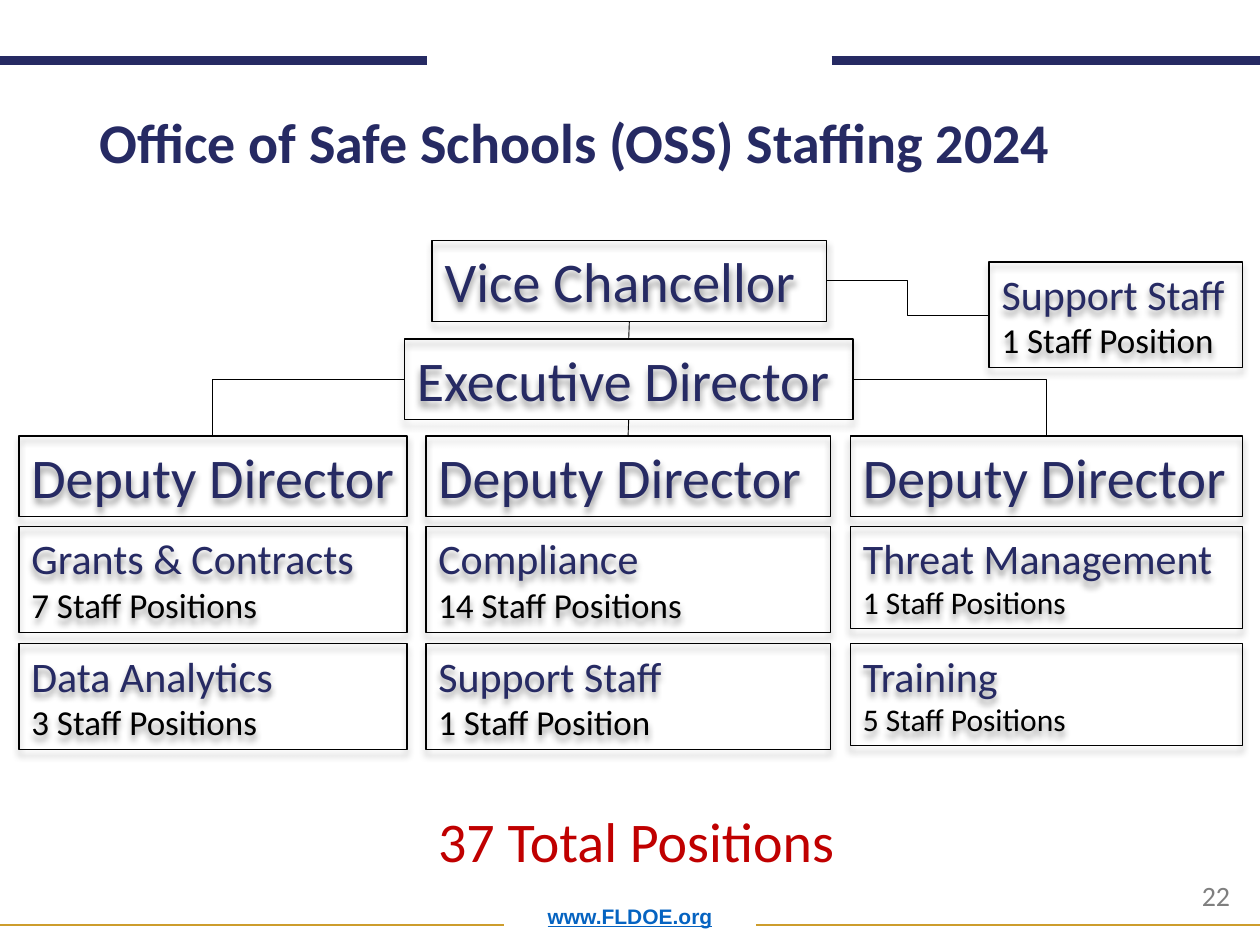
from lxml.etree import SubElement
from pptx import Presentation
from pptx.dml.color import RGBColor
from pptx.enum.shapes import MSO_CONNECTOR, MSO_SHAPE
from pptx.enum.text import MSO_ANCHOR, MSO_AUTO_SIZE, PP_ALIGN
from pptx.oxml.ns import qn
from pptx.util import Inches, Pt

COLORS = {
    "navy": "262A63",
    "gold": "CD9D2C",
    "red": "C00000",
    "black": "000000",
    "gray": "7F7F7F",
    "link": "0563C1",
}
TOP, LEFT, BOTTOM, RIGHT = range(4)
DEPUTIES = [
    (0.15, 3.08, 0.84, 20, [("Grants & Contracts", "7 Staff Positions"),
                            ("Data Analytics", "3 Staff Positions")]),
    (3.38, 3.21, 0.84, 20, [("Compliance", "14 Staff Positions"),
                            ("Support Staff", "1 Staff Position")]),
    (6.75, 3.11, 0.81, 18, [("Threat Management", "1 Staff Positions"),
                            ("Training", "5 Staff Positions")]),
]


def rgb(name):
    return RGBColor.from_string(COLORS[name])


def format_text(p, size, color, font="Calibri", bold=False, align=PP_ALIGN.LEFT):
    p.alignment = align
    for r in p.runs:
        r.font.name = font
        r.font.size = Pt(size)
        r.font.bold = bold
        r.font.color.rgb = rgb(color)


def add_label(s, box, text, size, color, **style):
    tf = s.shapes.add_textbox(*map(Inches, box)).text_frame
    tf.word_wrap = True
    tf.text = text
    format_text(tf.paragraphs[0], size, color, **style)
    return tf


def style_line(c, color, width):
    c.line.color.rgb = rgb(color)
    c.line.width = Pt(width)
    SubElement(c._element.spPr, qn("a:effectLst"))


def add_rule(s, left, right, y, color, width):
    c = s.shapes.add_connector(MSO_CONNECTOR.STRAIGHT, Inches(left), Inches(y),
                               Inches(right), Inches(y))
    style_line(c, color, width)


def add_shadow(sp):
    effects = sp._element.spPr.find(qn("a:effectLst"))
    shadow = SubElement(effects, qn("a:outerShdw"), blurRad=str(Pt(4)),
                        dist=str(Pt(3)), dir="5400000", algn="t", rotWithShape="0")
    color = SubElement(shadow, qn("a:srgbClr"), val=COLORS["black"])
    SubElement(color, qn("a:alpha"), val="40000")


def add_box(s, box, lines):
    sp = s.shapes.add_shape(MSO_SHAPE.RECTANGLE, *map(Inches, box))
    sp.fill.background()
    sp.line.color.rgb = rgb("black")
    sp.line.width = Pt(0.75)
    sp.shadow.inherit = False
    add_shadow(sp)
    tf = sp.text_frame
    tf.word_wrap = True
    tf.vertical_anchor = MSO_ANCHOR.TOP
    tf.text = "\n".join(text for text, _, _ in lines)
    for p, (_, size, color) in zip(tf.paragraphs, lines):
        format_text(p, size, color)
    return sp


def add_role(s, box, role):
    return add_box(s, box, [(role, 32, "navy")])


def add_unit(s, box, name, staff, size):
    return add_box(s, box, [(name, 24, "navy"), (staff, size, "black")])


def join(s, start, start_side, end, end_side, preset="line"):
    kind = MSO_CONNECTOR.STRAIGHT if preset == "line" else MSO_CONNECTOR.ELBOW
    c = s.shapes.add_connector(kind, 0, 0, 0, 0)
    c.begin_connect(start, start_side)
    c.end_connect(end, end_side)
    c._element.spPr.find(qn("a:prstGeom")).set("prst", preset)
    style_line(c, "black", 0.5)


def add_frame(s, width, height):
    top, bottom = 0.48, height - 0.16
    add_rule(s, 0, 3.39, top, "navy", 5)
    add_rule(s, 6.6, width, top, "navy", 5)
    add_rule(s, 0, 4, bottom, "gold", 1)
    add_rule(s, 6, width, bottom, "gold", 1)
    tf = add_label(s, (0.69, 7, 8.62, 0.42), "www.FLDOE.org", 12, "link",
                   font="Arial", bold=True, align=PP_ALIGN.CENTER)
    tf.vertical_anchor = MSO_ANCHOR.BOTTOM
    tf.paragraphs[0].line_spacing = 0.9
    tf.paragraphs[0].runs[0].font.underline = True
    add_label(s, (9.44, 6.92, 0.52, 0.37), "22", 16, "gray")


def add_title(s, box, text):
    title = s.shapes.title
    title.left, title.top, title.width, title.height = map(Inches, box)
    tf = title.text_frame
    tf.text = text
    tf.auto_size = MSO_AUTO_SIZE.NONE
    tf.vertical_anchor = MSO_ANCHOR.BOTTOM
    tf.paragraphs[0].line_spacing = 0.9
    format_text(tf.paragraphs[0], 32, "navy", bold=True)


def add_deputy(s, left, top, width, unit_height, size, units):
    deputy = add_role(s, (left, top, width, 0.64), "Deputy Director")
    for i, (name, staff) in enumerate(units):
        add_unit(s, (left, top + 0.72 + 0.93 * i, width, unit_height), name, staff, size)
    return deputy


def add_org_chart(s, top):
    chancellor = add_role(s, (3.43, top, 3.13, 0.64), "Vice Chancellor")
    director = add_role(s, (3.21, top + 0.78, 3.56, 0.64), "Executive Director")
    support = add_unit(s, (7.85, top + 0.17, 2.01, 0.84),
                       "Support Staff", "1 Staff Position", 20)
    left, middle, right = [
        add_deputy(s, x, top + 1.55, width, height, size, units)
        for x, width, height, size, units in DEPUTIES
    ]
    join(s, chancellor, BOTTOM, director, TOP)
    join(s, chancellor, RIGHT, support, LEFT, "bentConnector3")
    join(s, director, LEFT, left, TOP, "bentConnector2")
    join(s, director, BOTTOM, middle, TOP)
    join(s, director, RIGHT, right, TOP, "bentConnector2")


def main():
    prs = Presentation()
    prs.slide_width, prs.slide_height = Inches(10), Inches(7.5)
    s = prs.slides.add_slide(prs.slide_layouts[5])
    add_frame(s, 10, 7.5)
    add_title(s, (0.69, 0.87, 8.76, 0.57), "Office of Safe Schools (OSS) Staffing 2024")
    add_org_chart(s, 1.91)
    add_label(s, (3.21, 6.35, 3.68, 0.64), "37 Total Positions", 32, "red",
              align=PP_ALIGN.CENTER)
    prs.save("out.pptx")


if __name__ == "__main__":
    main()
